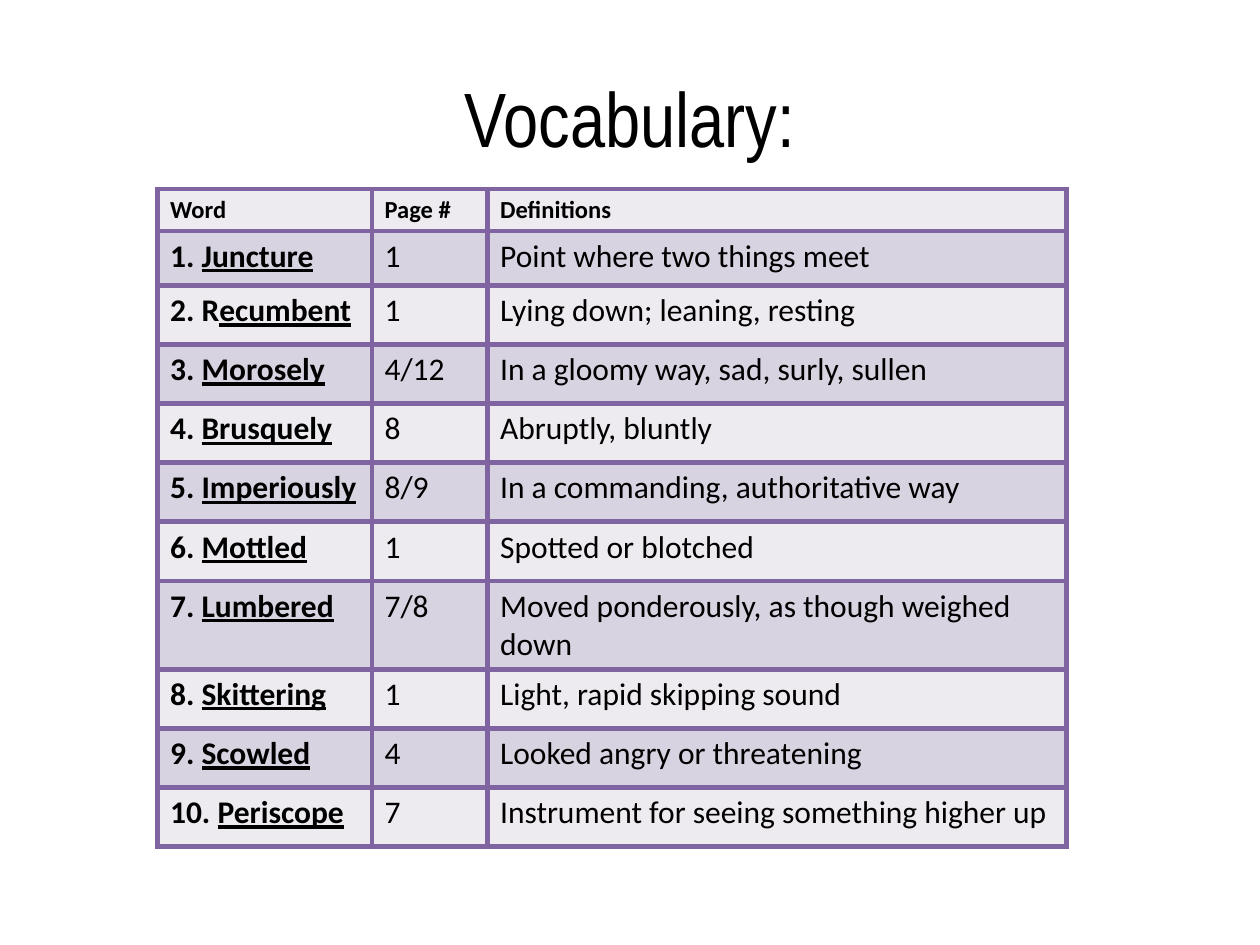
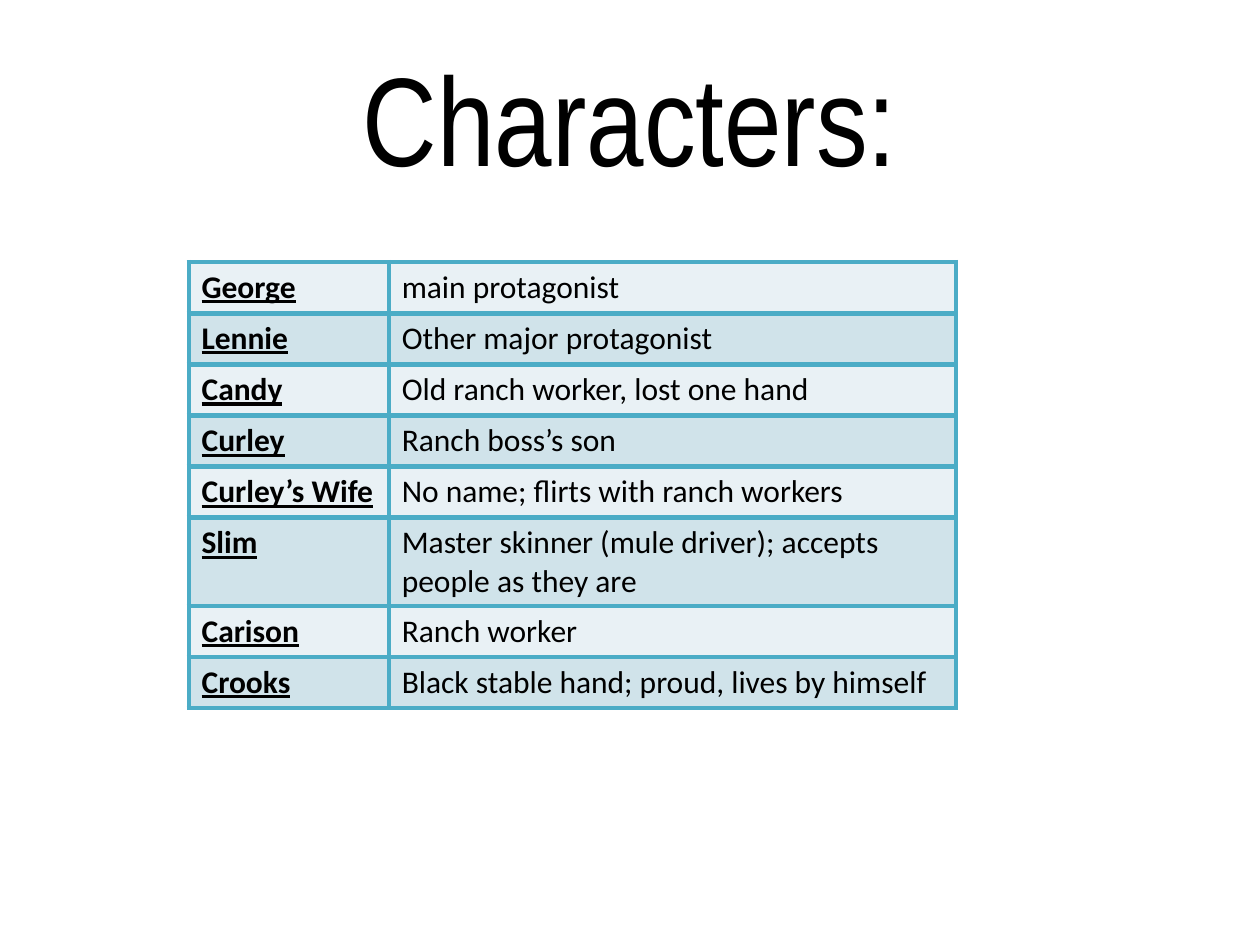
from dataclasses import dataclass

from lxml.etree import SubElement
from pptx import Presentation
from pptx.dml.color import RGBColor
from pptx.enum.text import MSO_ANCHOR as Anchor, PP_ALIGN as Align
from pptx.oxml.ns import qn
from pptx.slide import Slide
from pptx.table import _Cell as Cell
from pptx.text.text import _Paragraph as Paragraph
from pptx.util import Pt

BLACK = RGBColor(0x00, 0x00, 0x00)
PURPLE = RGBColor(0x80, 0x64, 0xA2)
PURPLE_PALE = RGBColor(0xED, 0xEA, 0xF0)
PURPLE_LIGHT = RGBColor(0xD8, 0xD3, 0xE0)
AQUA = RGBColor(0x4B, 0xAC, 0xC6)
AQUA_PALE = RGBColor(0xE9, 0xF1, 0xF5)
AQUA_LIGHT = RGBColor(0xD0, 0xE3, 0xEA)

BORDER_WIDTH = Pt(3)
TITLE_BOX = (Pt(36), Pt(21.6), Pt(648), Pt(90))
PLAIN = {"name": "Calibri", "size": Pt(18), "bold": False, "underline": False}
NUMBER = PLAIN | {"bold": True}
TERM = NUMBER | {"underline": True}
HEADING = NUMBER | {"size": Pt(14)}


@dataclass(frozen=True)
class Theme:
    """Border colour and the two alternating row fills."""

    border: RGBColor
    bands: tuple[RGBColor, RGBColor]


@dataclass(frozen=True)
class Glossary:
    """A titled table whose first column holds terms, as 'prefix|term'."""

    title: str
    title_size: float
    left: float
    top: float
    theme: Theme
    widths: tuple[float, ...]
    heights: tuple[float, ...]
    entries: tuple[tuple[str, ...], ...]
    headings: tuple[str, ...] = ()


VOCABULARY = Glossary(
    title="Vocabulary:",
    title_size=44,
    left=90,
    top=108,
    theme=Theme(PURPLE, (PURPLE_PALE, PURPLE_LIGHT)),
    widths=(122.6, 66, 331),
    heights=(23, 31, *[33.8] * 5, 48.2, *[33.8] * 3),
    headings=("Word", "Page #", "Definitions"),
    entries=(
        ("1. |Juncture", "1", "Point where two things meet"),
        ("2. R|ecumbent", "1", "Lying down; leaning, resting"),
        ("3. |Morosely", "4/12", "In a gloomy way, sad, surly, sullen"),
        ("4. |Brusquely", "8", "Abruptly, bluntly"),
        ("5. |Imperiously", "8/9", "In a commanding, authoritative way"),
        ("6. |Mottled", "1", "Spotted or blotched"),
        ("7. |Lumbered", "7/8", "Moved ponderously, as though weighed down"),
        ("8. |Skittering", "1", "Light, rapid skipping sound"),
        ("9. |Scowled", "4", "Looked angry or threatening"),
        ("10. |Periscope", "7", "Instrument for seeing something higher up"),
    ),
)

CHARACTERS = Glossary(
    title="Characters:",
    title_size=72,
    left=108,
    top=149.8,
    theme=Theme(AQUA, (AQUA_PALE, AQUA_LIGHT)),
    widths=(114.4, 324),
    heights=(29.2,) * 8,
    entries=(
        ("|George", "main protagonist"),
        ("|Lennie", "Other major protagonist"),
        ("|Candy", "Old ranch worker, lost one hand"),
        ("|Curley", "Ranch boss’s son"),
        ("|Curley’s Wife", "No name; flirts with ranch workers"),
        ("|Slim", "Master skinner (mule driver); accepts people as they are"),
        ("|Carison", "Ranch worker"),
        ("|Crooks", "Black stable hand; proud, lives by himself"),
    ),
)


def add_run(paragraph: Paragraph, text: str, style: dict) -> None:
    """Append black text in the given font style."""
    run = paragraph.add_run()
    run.text = text
    for attribute, value in style.items():
        setattr(run.font, attribute, value)
    run.font.color.rgb = BLACK


def add_title(slide: Slide, text: str, size: float) -> None:
    """Write the centred slide title."""
    frame = slide.shapes.add_textbox(*TITLE_BOX).text_frame
    for attribute, value in {"word_wrap": True, "vertical_anchor": Anchor.MIDDLE}.items():
        setattr(frame, attribute, value)
    heading = frame.paragraphs[0]
    heading.alignment = Align.CENTER
    add_run(heading, text, {"name": "Arial Narrow", "size": Pt(size)})


def paint_cell(cell: Cell, border: RGBColor, band: RGBColor) -> None:
    """Give a cell its four borders and its fill."""
    properties = cell._tc.get_or_add_tcPr()
    for side in ("lnL", "lnR", "lnT", "lnB"):
        line = SubElement(properties, qn(f"a:{side}"), w=str(BORDER_WIDTH))
        solid = SubElement(line, qn("a:solidFill"))
        SubElement(solid, qn("a:srgbClr"), val=str(border))
    cell.fill.solid()
    cell.fill.fore_color.rgb = band


def write_cell(cell: Cell, text: str, is_heading: bool) -> None:
    """Write a heading, a plain entry, or a prefix with its underlined term."""
    paragraph = cell.text_frame.paragraphs[0]
    prefix, divider, term = text.partition("|")
    if prefix:
        style = HEADING if is_heading else NUMBER if divider else PLAIN
        add_run(paragraph, prefix, style)
    if term:
        add_run(paragraph, term, TERM)


def add_glossary_table(slide: Slide, glossary: Glossary) -> None:
    """Draw the banded table of terms."""
    lines = ((glossary.headings,) if glossary.headings else ()) + glossary.entries
    table = slide.shapes.add_table(
        len(lines), len(glossary.widths), Pt(glossary.left), Pt(glossary.top),
        Pt(sum(glossary.widths)), Pt(sum(glossary.heights)),
    ).table
    for flag, value in {"first_row": False, "horz_banding": False}.items():
        setattr(table, flag, value)
    for column, width in zip(table.columns, glossary.widths):
        column.width = Pt(width)
    for index, (row, height, texts) in enumerate(zip(table.rows, glossary.heights, lines)):
        row.height = Pt(height)
        for cell, text in zip(row.cells, texts):
            paint_cell(cell, glossary.theme.border, glossary.theme.bands[index % 2])
            write_cell(cell, text, texts is glossary.headings)


def main() -> None:
    """Build both glossary slides and save them."""
    deck = Presentation()
    deck.slide_width, deck.slide_height = Pt(720), Pt(540)
    for glossary in (VOCABULARY, CHARACTERS):
        slide = deck.slides.add_slide(deck.slide_layouts[6])
        add_title(slide, glossary.title, glossary.title_size)
        add_glossary_table(slide, glossary)
    deck.save("out.pptx")


if __name__ == "__main__":
    main()
